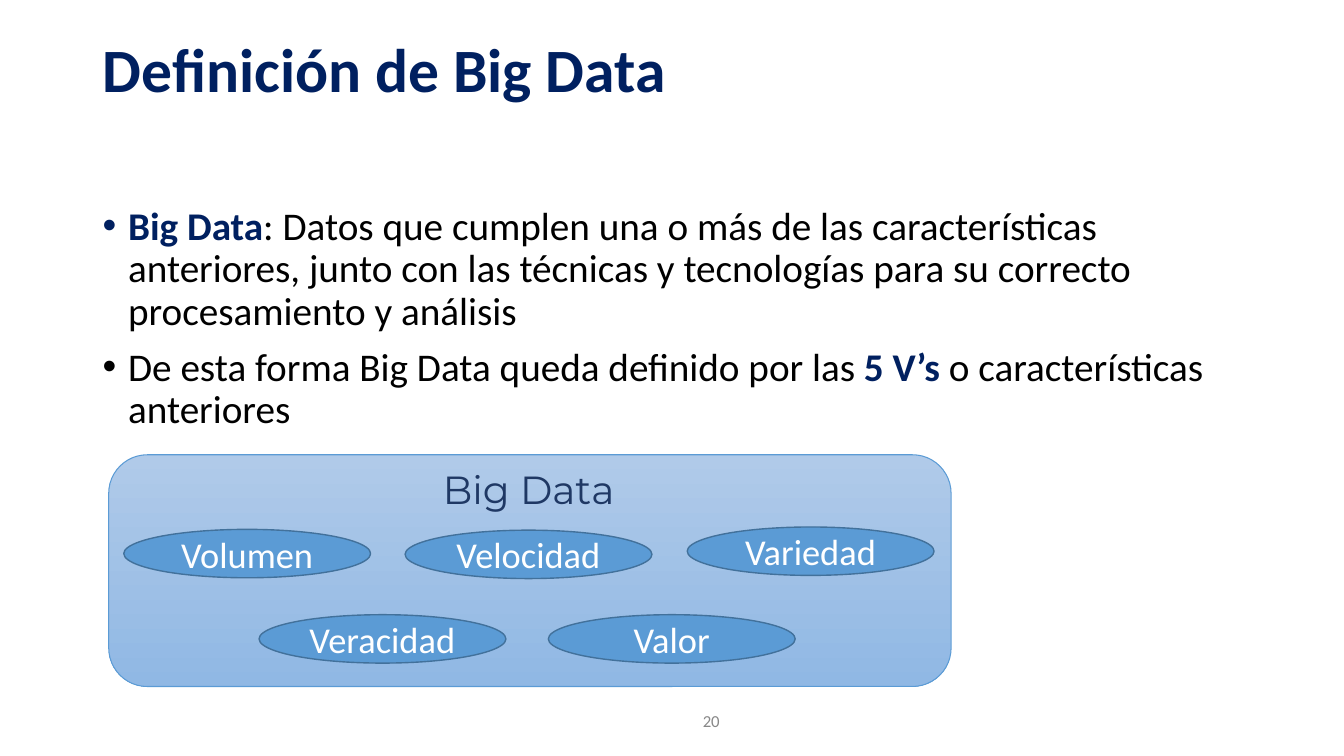
from typing import NamedTuple

from lxml.etree import SubElement
from pptx import Presentation
from pptx.dml.color import RGBColor
from pptx.enum.shapes import MSO_SHAPE
from pptx.enum.text import MSO_ANCHOR, MSO_AUTO_SIZE, PP_ALIGN
from pptx.oxml.ns import qn
from pptx.util import Cm, Pt

NAVY, BLACK, WHITE, BLUE = "002060", "000000", "FFFFFF", "5B9BD5"


class Box(NamedTuple):
    """Left, top, width and height in centimetres."""
    left: float
    top: float
    wide: float
    high: float


class Style(NamedTuple):
    """Look of a run of text."""
    size: float
    hue: str
    bold: bool = False
    face: str = "Calibri"


class Trait(NamedTuple):
    """One of the five V's and its place."""
    name: str
    left: float
    top: float


class Label(NamedTuple):
    """A free line of text."""
    text: str
    box: Box
    style: Style
    align: PP_ALIGN
    anchor: MSO_ANCHOR


PLAIN, STRONG = Style(28, BLACK), Style(28, NAVY, True)

TRAITS = [
    Trait("Volumen", 3.12, 13.34),
    Trait("Velocidad", 10.21, 13.36),
    Trait("Variedad", 17.32, 13.28),
    Trait("Veracidad", 6.53, 15.49),
    Trait("Valor", 13.82, 15.49),
]

LABELS = [
    Label("Big Data", Box(10.62, 11.61, 5.41, 1.45),
          Style(28, "1F3864", face="Montserrat"), PP_ALIGN.CENTER, MSO_ANCHOR.TOP),
    Label("20", Box(16.94, 17.65, 1.45, 1.02),
          Style(12, "888888"), PP_ALIGN.RIGHT, MSO_ANCHOR.MIDDLE),
]

POINTS = [
    [("Big Data", STRONG),
     (": Datos que cumplen una o más de las características anteriores, "
      "junto con las técnicas y tecnologías para su correcto "
      "procesamiento y análisis", PLAIN)],
    [("De esta forma Big Data queda definido por las ", PLAIN),
     ("5 V’s ", STRONG),
     ("o características anteriores", PLAIN)],
]


def tint(code: str) -> RGBColor:
    """Turn a hex string into a colour."""
    return RGBColor.from_string(code)


def lengths(box: Box) -> list:
    """Give the four lengths of a box."""
    return [Cm(part) for part in box]


def dress(run, style: Style) -> None:
    """Apply a style to a run."""
    font = run.font
    font.name, font.size, font.bold = style.face, Pt(style.size), style.bold
    font.color.rgb = tint(style.hue)


def write(shape, text: str, style: Style, align: PP_ALIGN, anchor: MSO_ANCHOR) -> None:
    """Put one styled line into a shape."""
    frame = shape.text_frame
    frame.text = text
    frame.word_wrap = True
    frame.auto_size = MSO_AUTO_SIZE.NONE
    frame.vertical_anchor = anchor
    line = frame.paragraphs[0]
    line.alignment = align
    dress(line.runs[0], style)


def draw(slide, kind: MSO_SHAPE, box: Box, edge: str, width: float):
    """Add an outlined shape without shadow."""
    shape = slide.shapes.add_shape(kind, *lengths(box))
    shape.shadow.inherit = False
    shape.line.color.rgb = tint(edge)
    shape.line.width = Pt(width)
    return shape


def bullet(line, hue: str) -> None:
    """Give a paragraph a hanging coloured bullet."""
    props = line._p.get_or_add_pPr()
    props.set("marL", str(Cm(0.64)))
    props.set("indent", str(-Cm(0.64)))
    SubElement(SubElement(props, qn("a:buClr")), qn("a:srgbClr")).set("val", hue)
    SubElement(props, qn("a:buFont")).set("typeface", "Arial")
    SubElement(props, qn("a:buChar")).set("char", "•")


def add_title(slide) -> None:
    """Place and style the title."""
    title = slide.shapes.title
    title.left, title.top, title.width, title.height = lengths(Box(2.34, 0, 29.21, 3.68))
    write(title, "Definición de Big Data", Style(44, NAVY, True),
          PP_ALIGN.LEFT, MSO_ANCHOR.MIDDLE)
    title.text_frame.paragraphs[0].line_spacing = 0.9


def add_points(slide) -> None:
    """Write the bulleted definition."""
    frame = slide.shapes.add_textbox(*lengths(Box(2.34, 5.08, 29.21, 12.57))).text_frame
    frame.word_wrap = True
    for rank, parts in enumerate(POINTS):
        line = frame.add_paragraph() if rank else frame.paragraphs[0]
        line.line_spacing = 0.9
        line.space_before = Pt(10 if rank else 0)
        bullet(line, parts[0][1].hue)
        for text, style in parts:
            run = line.add_run()
            run.text = text
            dress(run, style)


def add_panel(slide) -> None:
    """Draw the shaded panel behind the five V's."""
    panel = draw(slide, MSO_SHAPE.ROUNDED_RECTANGLE, Box(2.74, 11.46, 21.23, 5.84), BLUE, 0.75)
    panel.fill.gradient()
    panel.fill.gradient_angle = 270
    for stop, hue in zip(panel.fill.gradient_stops, ("B0CAE9", "90B8E4")):
        stop.color.rgb = tint(hue)


def add_trait(slide, trait: Trait) -> None:
    """Draw one of the five V's."""
    oval = draw(slide, MSO_SHAPE.OVAL, Box(trait.left, trait.top, 6.22, 1.22), "42719B", 1)
    oval.fill.solid()
    oval.fill.fore_color.rgb = tint(BLUE)
    write(oval, trait.name, Style(26, WHITE), PP_ALIGN.CENTER, MSO_ANCHOR.MIDDLE)


def main() -> None:
    """Build and save the slide."""
    deck = Presentation()
    deck.slide_width, deck.slide_height = Cm(33.87), Cm(19.05)
    slide = deck.slides.add_slide(deck.slide_layouts[5])
    add_panel(slide)
    add_points(slide)
    add_title(slide)
    for trait in TRAITS:
        add_trait(slide, trait)
    for text, box, style, align, anchor in LABELS:
        write(slide.shapes.add_textbox(*lengths(box)), text, style, align, anchor)
    deck.save("out.pptx")


if __name__ == "__main__":
    main()
